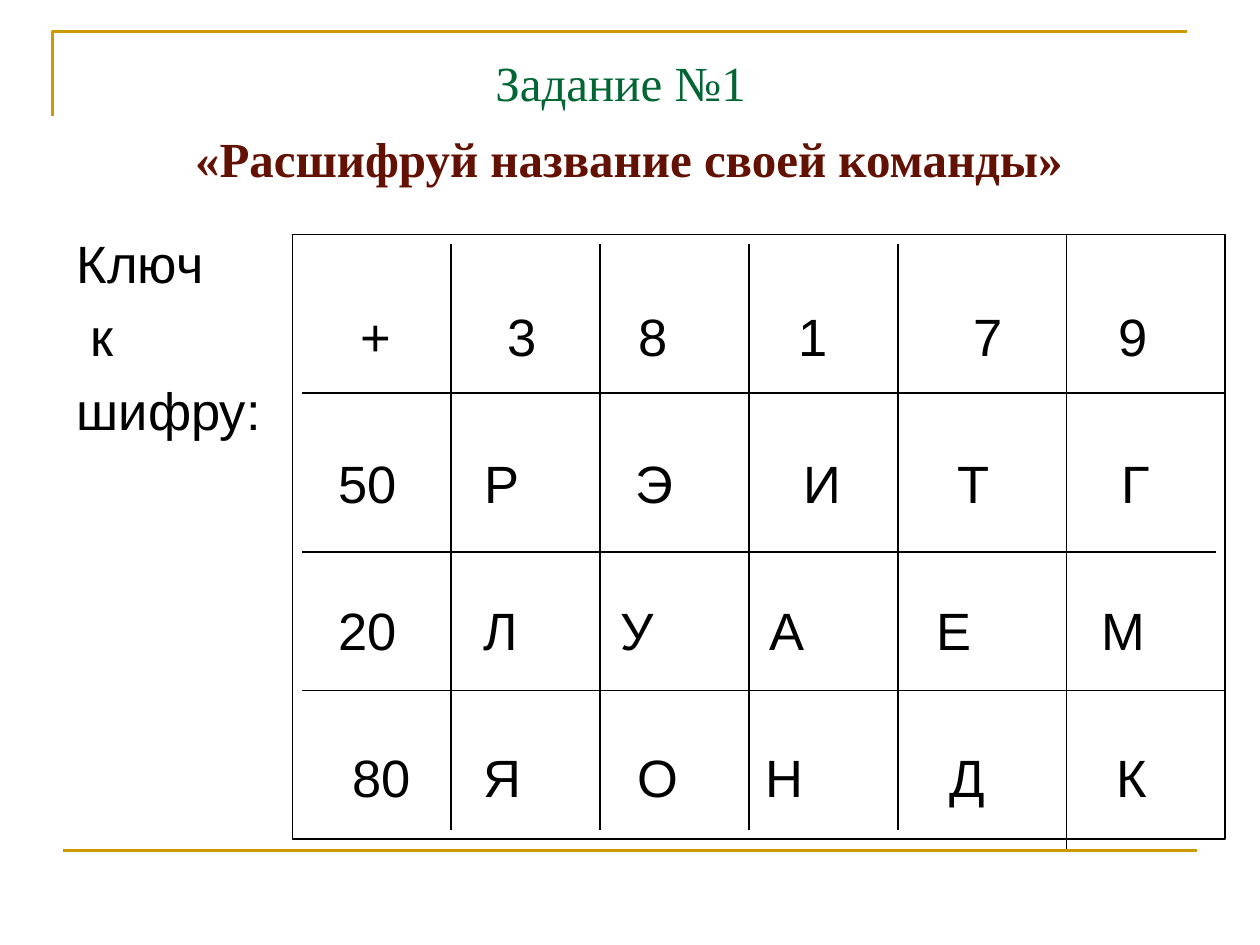
"""Build the cipher-key task slide."""
from lxml.etree import SubElement
from pptx import Presentation
from pptx.dml.color import RGBColor
from pptx.enum.shapes import MSO_CONNECTOR as Connector, MSO_SHAPE as Shape
from pptx.enum.text import MSO_ANCHOR as Anchor, MSO_AUTO_SIZE as AutoSize, PP_ALIGN as Align
from pptx.oxml.ns import qn
from pptx.util import Pt

COLORS = {"gold": "CC9900", "green": "006633", "maroon": "631103", "black": "000000"}
HEADING = {"name": "Times New Roman", "size": Pt(28)}
CIPHER = {"name": "Arial", "size": Pt(30), "bold": False}
KEY_LABEL = [("Ключ", 0), ("к", 8), ("шифру:", 0)]
KEY_ROWS = [
    ("+ 3 8 1 7 9", [48, 131.5, 206, 297.5, 397.5, 480.5]),
    ("50 Р Э И Т Г", [43, 120, 207, 303, 389.5, 482]),
    ("20 Л У А Е М", [43, 119, 197, 283, 378, 475]),
    ("80 Я О Н Д К", [51, 120, 209, 281.5, 386, 480]),
]


def apply_format(target, values):
    for attribute, value in values.items():
        setattr(target, attribute, value)


def color(name):
    return RGBColor.from_string(COLORS[name])


def place_text(holder, left, top, width, height, margin_top):
    apply_format(holder, {"left": Pt(left), "top": Pt(top),
                          "width": Pt(width), "height": Pt(height)})
    frame = holder.text_frame
    apply_format(frame, {"auto_size": AutoSize.NONE, "word_wrap": True,
                         "vertical_anchor": Anchor.TOP, "margin_top": Pt(margin_top)})
    return frame


def add_line_of_text(frame, index, text, font, tint, gap, align=Align.LEFT):
    line = frame.paragraphs[0] if index == 0 else frame.add_paragraph()
    apply_format(line, {"line_spacing": 1.0, "alignment": align,
                        "space_before": Pt(gap if index else 0)})
    run = line.add_run()
    run.text = text
    apply_format(run.font, font)
    run.font.color.rgb = color(tint)
    return line._p.get_or_add_pPr()


def style_outline(outline, tint, weight):
    outline.color.rgb = color(tint)
    outline.width = Pt(weight)


def add_rule(slide, start, end, tint="black", weight=0.75):
    rule = slide.shapes.add_connector(Connector.STRAIGHT, *map(Pt, (*start, *end)))
    style_outline(rule.line, tint, weight)
    SubElement(rule._element.spPr, qn("a:effectLst"))


def add_corner(slide):
    builder = slide.shapes.build_freeform(Pt(30.2), Pt(66.2))
    builder.add_line_segments([(Pt(30.2), Pt(18)), (Pt(678.2), Pt(18))], close=False)
    corner = builder.convert_to_shape()
    corner.fill.background()
    corner.shadow.inherit = False
    style_outline(corner.line, "gold", 1.5)


def add_heading(slide):
    frame = place_text(slide.shapes.title, 36.7, 25.9, 635.8, 55.4, 4.3)
    add_line_of_text(frame, 0, "Задание №1", {**HEADING, "bold": False},
                     "green", 0, Align.CENTER)
    subtitle = add_line_of_text(frame, 1, "«Расшифруй название своей команды»",
                                {**HEADING, "bold": True}, "maroon", 9.8, Align.CENTER)
    subtitle.set("marL", str(int(Pt(9.5))))


def add_key_label(slide):
    frame = place_text(slide.placeholders[1], 36.7, 128.2, 648, 356.4, 3.6)
    for index, (word, indent) in enumerate(KEY_LABEL):
        properties = add_line_of_text(frame, index, word, CIPHER, "black", 6)
        properties.set("marL", str(int(Pt(indent))))
        properties.set("indent", "0")
        SubElement(properties, qn("a:buNone"))


def add_key_rows(slide):
    rows = slide.shapes.add_textbox(0, 0, 0, 0)
    frame = place_text(rows, 167, 173.8, 532.8, 300, 0)
    apply_format(frame, {"margin_left": 0, "margin_right": 0})
    for index, (symbols, stops) in enumerate(KEY_ROWS):
        text = "".join(f"\t{symbol}" for symbol in symbols.split())
        properties = add_line_of_text(frame, index, text, CIPHER, "black", 48)
        tabs = SubElement(properties, qn("a:tabLst"))
        for stop in stops:
            SubElement(tabs, qn("a:tab"), pos=str(int(Pt(stop))), algn="ctr")


def add_grid(slide):
    border = slide.shapes.add_shape(Shape.RECTANGLE, *map(Pt, (167, 133.9, 533, 345.6)))
    border.fill.background()
    border.shadow.inherit = False
    style_outline(border.line, "black", 0.75)
    for y, right in ((224.6, 700.2), (315.4, 694.8), (394.6, 700.2)):
        add_rule(slide, (172.8, y), (right, y))
    for column in range(4):
        x = 257.8 + 85.1 * column
        add_rule(slide, (x, 139.7), (x, 474.5))
    add_rule(slide, (609.6, 133.9), (609.6, 485.3))


def main():
    deck = Presentation()
    apply_format(deck, {"slide_width": Pt(720), "slide_height": Pt(540)})
    slide = deck.slides.add_slide(deck.slide_layouts[1])
    add_corner(slide)
    add_rule(slide, (36, 486), (684, 486), "gold", 1.5)
    add_heading(slide)
    add_key_label(slide)
    add_key_rows(slide)
    add_grid(slide)
    deck.save("out.pptx")


if __name__ == "__main__":
    main()
